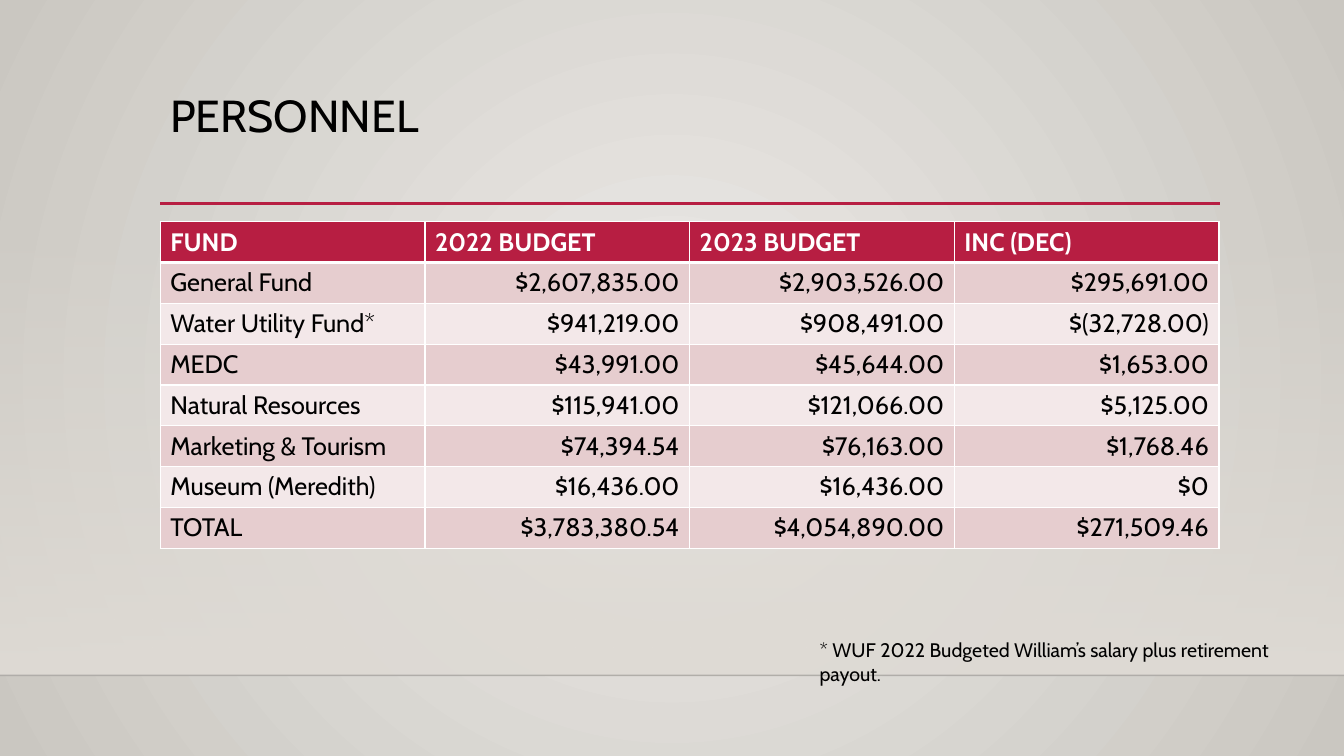
"""Build the personnel budget slide with its fund table and footnote."""
from lxml import etree
from pptx import Presentation
from pptx.dml.color import RGBColor
from pptx.enum.shapes import MSO_CONNECTOR as Connector, MSO_SHAPE as Shape
from pptx.enum.text import MSO_ANCHOR as Anchor, PP_ALIGN as Align
from pptx.oxml import parse_xml
from pptx.oxml.ns import nsdecls, qn
from pptx.util import Inches, Pt

COLORS = {
    "glow": "ECEAE7", "edge": "CAC7C1", "floor": "DFDBD5",
    "floor_line": "000001", "accent": "B71E42", "text": "000000",
    "white": "FFFFFF", "band_dark": "E6CDCF", "band_light": "F3E8E9",
}
RGB = {name: RGBColor.from_string(value) for name, value in COLORS.items()}
FUNDS = [
    ("FUND", "2022 BUDGET", "2023 BUDGET", "INC (DEC)"),
    ("General Fund", "$2,607,835.00", "$2,903,526.00", "$295,691.00"),
    ("Water Utility Fund*", "$941,219.00", "$908,491.00", "$(32,728.00)"),
    ("MEDC", "$43,991.00", "$45,644.00", "$1,653.00"),
    ("Natural Resources", "$115,941.00", "$121,066.00", "$5,125.00"),
    ("Marketing & Tourism", "$74,394.54", "$76,163.00", "$1,768.46"),
    ("Museum (Meredith)", "$16,436.00", "$16,436.00", "$0"),
    ("TOTAL", "$3,783,380.54", "$4,054,890.00", "$271,509.46"),
]
LEFT, WIDTH = 1.59, 10.5


def write_text(frame, text, size=18, color="text", bold=False,
               align=Align.LEFT, line_spacing=1.0):
    frame.word_wrap = True
    paragraph = frame.paragraphs[0]
    paragraph.alignment = align
    paragraph.line_spacing = line_spacing
    run = paragraph.add_run()
    run.text = text
    run.font.name = "Cabin"
    run.font.size = Pt(size)
    run.font.bold = bold
    run.font.color.rgb = RGB[color]


def set_gradient(fill, start, end):
    fill.gradient()
    for stop, color, position in zip(fill.gradient_stops, (start, end), (0, 1)):
        stop.color.rgb = RGB[color]
        stop.position = position


presentation = Presentation()
presentation.slide_width, presentation.slide_height = Inches(13.33), Inches(7.5)
slide = presentation.slides.add_slide(presentation.slide_layouts[6])

set_gradient(slide.background.fill, "glow", "edge")
background_gradient = next(slide.element.iter(qn("a:gradFill")))
background_gradient.replace(background_gradient.find(qn("a:lin")), parse_xml(
    f'<a:path {nsdecls("a")} path="circle">'
    '<a:fillToRect l="50000" t="50000" r="50000" b="50000"/></a:path>'))

floor = slide.shapes.add_shape(
    Shape.RECTANGLE, 0, Inches(2.21), Inches(13.33), Inches(4.49))
floor.shadow.inherit = False
floor.line.fill.background()
set_gradient(floor.fill, "floor", "floor")
floor.fill.gradient_angle = 270
first_color = next(floor.element.iter(qn("a:srgbClr")))
etree.SubElement(first_color, qn("a:alpha"), val="0")

for x1, x2, y, color, weight, opacity in [
    (0, 13.33, 6.7, "floor_line", 1, 20),
    (LEFT, 12.1, 2.02, "accent", 2.5, 100),
]:
    rule = slide.shapes.add_connector(
        Connector.STRAIGHT, Inches(x1), Inches(y), Inches(x2), Inches(y))
    rule.line.color.rgb = RGB[color]
    rule.line.width = Pt(weight)
    line_color = next(rule.element.iter(qn("a:srgbClr")))
    etree.SubElement(line_color, qn("a:alpha"), val=str(opacity * 1000))
    etree.SubElement(rule.element.spPr, qn("a:effectLst"))

title = slide.shapes.add_textbox(
    Inches(LEFT), Inches(0.88), Inches(WIDTH), Inches(1.15))
title.text_frame.vertical_anchor = Anchor.TOP
write_text(title.text_frame, "PERSONNEL", size=32, line_spacing=0.9)

table = slide.shapes.add_table(
    len(FUNDS), len(FUNDS[0]), Inches(LEFT), Inches(2.2),
    Inches(WIDTH), Inches(3.24)).table
for row_index, fund in enumerate(FUNDS):
    header = row_index == 0
    band = "accent" if header else "band_dark" if row_index % 2 else "band_light"
    for column_index, value in enumerate(fund):
        cell = table.cell(row_index, column_index)
        for side in "LRTB":
            thick = (row_index, side) in [(0, "B"), (1, "T")]
            cell_properties = cell._tc.get_or_add_tcPr()
            cell_properties.append(parse_xml(
                f'<a:ln{side} {nsdecls("a")} w="{Pt(3 if thick else 1)}">'
                f'<a:solidFill><a:srgbClr val="{COLORS["white"]}"/></a:solidFill>'
                f'</a:ln{side}>'))
        cell.fill.solid()
        cell.fill.fore_color.rgb = RGB[band]
        write_text(cell.text_frame, value, bold=header,
                   color="white" if header else "text",
                   align=Align.LEFT if header or column_index == 0 else Align.RIGHT)

footnote = slide.shapes.add_textbox(
    Inches(8.03), Inches(6.28), Inches(5.18), Inches(0.34))
write_text(footnote.text_frame,
           "* WUF 2022 Budgeted William’s salary plus retirement payout.", size=14)

presentation.save("out.pptx")
